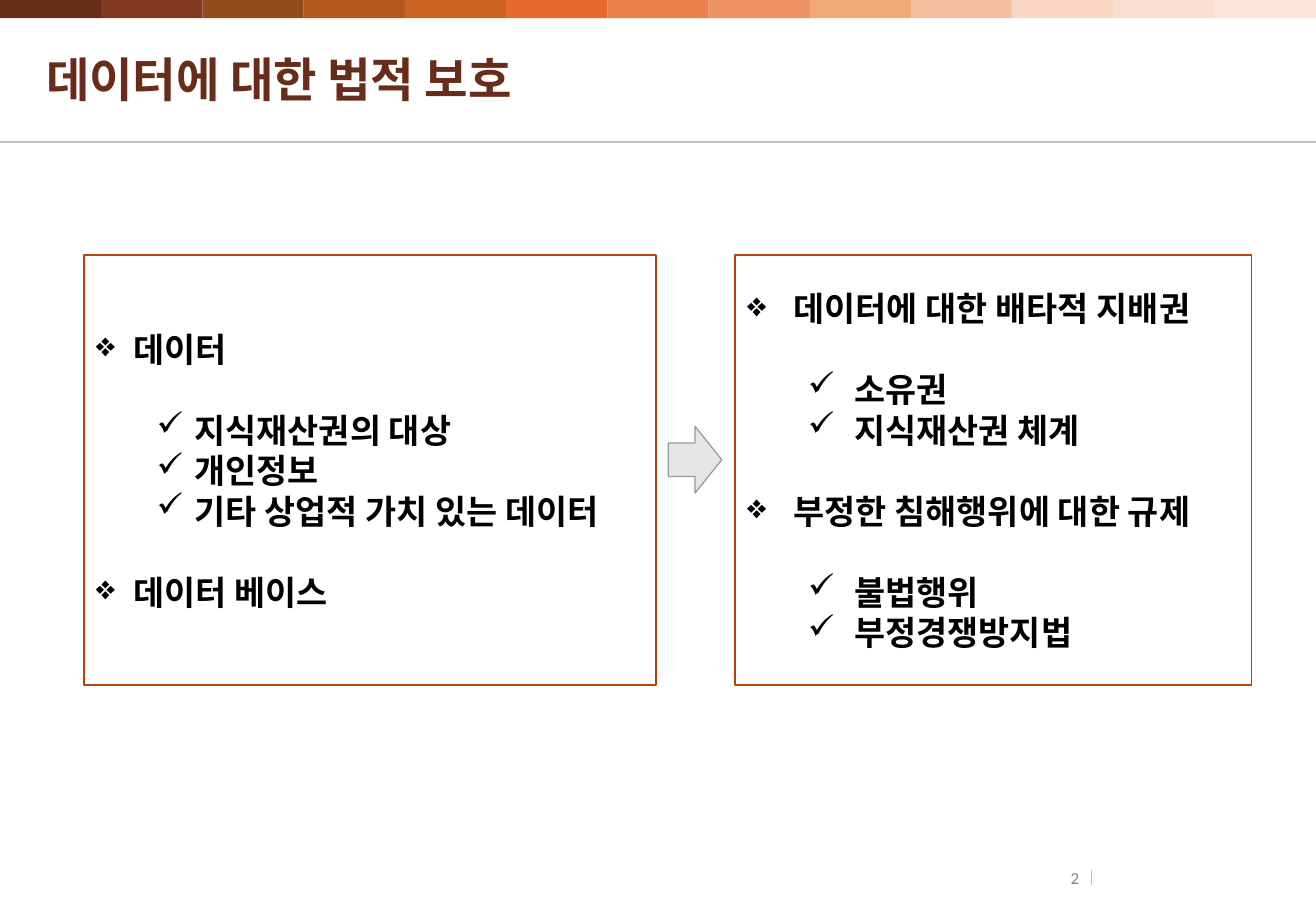
import pptx
import pptx.dml.color
import pptx.enum.shapes
import pptx.enum.text
import pptx.oxml.ns
import pptx.util
from lxml import etree

Inches = pptx.util.Inches
Pt = pptx.util.Pt
MSO_SHAPE = pptx.enum.shapes.MSO_SHAPE
PP_ALIGN = pptx.enum.text.PP_ALIGN
qn = pptx.oxml.ns.qn

FONT = "Calibri"
SLIDE_WIDTH, SLIDE_HEIGHT = 10.83, 7.5
LINE_HEIGHT = 24
COLORS = {
    "title": "682C1A",
    "text": "000000",
    "number": "808080",
    "rule": "BFBFBF",
    "box_line": "B5430B",
    "arrow_fill": "E6E6E6",
    "arrow_line": "9B9B9B",
}
BAND_COLORS = [
    "682C1A", "833821", "95491F", "B4571E", "CC6322", "E6692D", "EC804C",
    "EE9264", "F2A776", "F7C0A0", "F8D6C1", "FADECF", "FCE5D9",
]
BULLETS = ["❖", "✓"]

# Each item: level, text, whether a one-line gap comes before it
DATA_ITEMS = [
    (0, "데이터", False),
    (1, "지식재산권의 대상", True),
    (1, "개인정보", False),
    (1, "기타 상업적 가치 있는 데이터", False),
    (0, "데이터 베이스", True),
]
PROTECTION_ITEMS = [
    (0, "데이터에 대한 배타적 지배권", False),
    (1, "소유권", True),
    (1, "지식재산권 체계", False),
    (0, "부정한 침해행위에 대한 규제", True),
    (1, "불법행위", True),
    (1, "부정경쟁방지법", False),
]


def rgb(value):
    return pptx.dml.color.RGBColor.from_string(value)


def format_runs(paragraph, size, color, bold=False):
    for run in paragraph.runs:
        run.font.size = Pt(size)
        run.font.bold = bold
        run.font.color.rgb = rgb(color)
        run.font.name = FONT
        east_asian = etree.Element(qn("a:ea"), typeface=FONT)
        run.font._element.find(qn("a:latin")).addnext(east_asian)


def add_shape(slide, kind, box, fill=None, line=None, line_width=1):
    shape = slide.shapes.add_shape(kind, *map(Inches, box))
    shape.shadow.inherit = False
    if fill:
        shape.fill.solid()
        shape.fill.fore_color.rgb = rgb(fill)
    else:
        shape.fill.background()
    if line:
        shape.line.color.rgb = rgb(line)
        shape.line.width = Pt(line_width)
    else:
        shape.line.fill.background()
    return shape


def add_rule(slide, start, end, width):
    connector = slide.shapes.add_connector(
        pptx.enum.shapes.MSO_CONNECTOR.STRAIGHT, *map(Inches, start + end))
    connector.line.color.rgb = rgb(COLORS["rule"])
    connector.line.width = Pt(width)
    etree.SubElement(connector._element.spPr, qn("a:effectLst"))


def add_label(slide, box, text, size, color, bold=False,
              align=PP_ALIGN.LEFT, side_inset=0):
    text_frame = slide.shapes.add_textbox(*map(Inches, box)).text_frame
    text_frame.word_wrap = True
    text_frame.vertical_anchor = pptx.enum.text.MSO_ANCHOR.MIDDLE
    text_frame.margin_top = text_frame.margin_bottom = 0
    text_frame.margin_left = text_frame.margin_right = Inches(side_inset)
    text_frame.text = text
    paragraph = text_frame.paragraphs[0]
    paragraph.alignment = align
    format_runs(paragraph, size, color, bold)


def set_bullet(paragraph, level, hanging):
    """Give the paragraph its level's bullet and a hanging indent."""
    paragraph.level = level
    properties = paragraph._p.get_or_add_pPr()
    properties.set("marL", str(Inches(0.5 * level + hanging)))
    properties.set("indent", str(-Inches(hanging)))
    etree.SubElement(properties, qn("a:buChar"), char=BULLETS[level])


def add_list_box(slide, box, items, hanging):
    shape = add_shape(slide, MSO_SHAPE.RECTANGLE, box, line=COLORS["box_line"])
    text_frame = shape.text_frame
    text_frame.word_wrap = True
    text_frame.vertical_anchor = pptx.enum.text.MSO_ANCHOR.MIDDLE
    text_frame.text = "\n".join(text for level, text, gap in items)
    for paragraph, (level, text, gap) in zip(text_frame.paragraphs, items):
        set_bullet(paragraph, level, hanging)
        paragraph.alignment = PP_ALIGN.LEFT
        if gap:
            paragraph.space_before = Pt(LINE_HEIGHT)
        format_runs(paragraph, 20, COLORS["text"], bold=True)


def add_color_band(slide):
    step = SLIDE_WIDTH / len(BAND_COLORS)
    for index, color in enumerate(BAND_COLORS):
        add_shape(slide, MSO_SHAPE.RECTANGLE,
                  (index * step, 0, step, 0.15), fill=color)


def main():
    presentation = pptx.Presentation()
    presentation.slide_width = Inches(SLIDE_WIDTH)
    presentation.slide_height = Inches(SLIDE_HEIGHT)
    slide = presentation.slides.add_slide(presentation.slide_layouts[6])

    add_rule(slide, (0, 1.17), (SLIDE_WIDTH, 1.17), 1)
    add_rule(slide, (8.98, 7.16), (8.98, 7.29), 0.75)
    add_label(slide, (8.41, 7.15, 0.57, 0.15), "2", 10, COLORS["number"],
              align=PP_ALIGN.RIGHT, side_inset=0.1)
    add_color_band(slide)
    add_label(slide, (0.38, 0.21, 10.08, 0.87), "데이터에 대한 법적 보호",
              28, COLORS["title"], bold=True)

    add_list_box(slide, (0.69, 2.1, 4.71, 3.54), DATA_ITEMS, 0.31)
    add_shape(slide, MSO_SHAPE.RIGHT_ARROW, (5.5, 3.51, 0.44, 0.55),
              COLORS["arrow_fill"], COLORS["arrow_line"], 0.75)
    add_list_box(slide, (6.05, 2.1, 4.25, 3.54), PROTECTION_ITEMS, 0.38)

    presentation.save("out.pptx")


if __name__ == "__main__":
    main()
